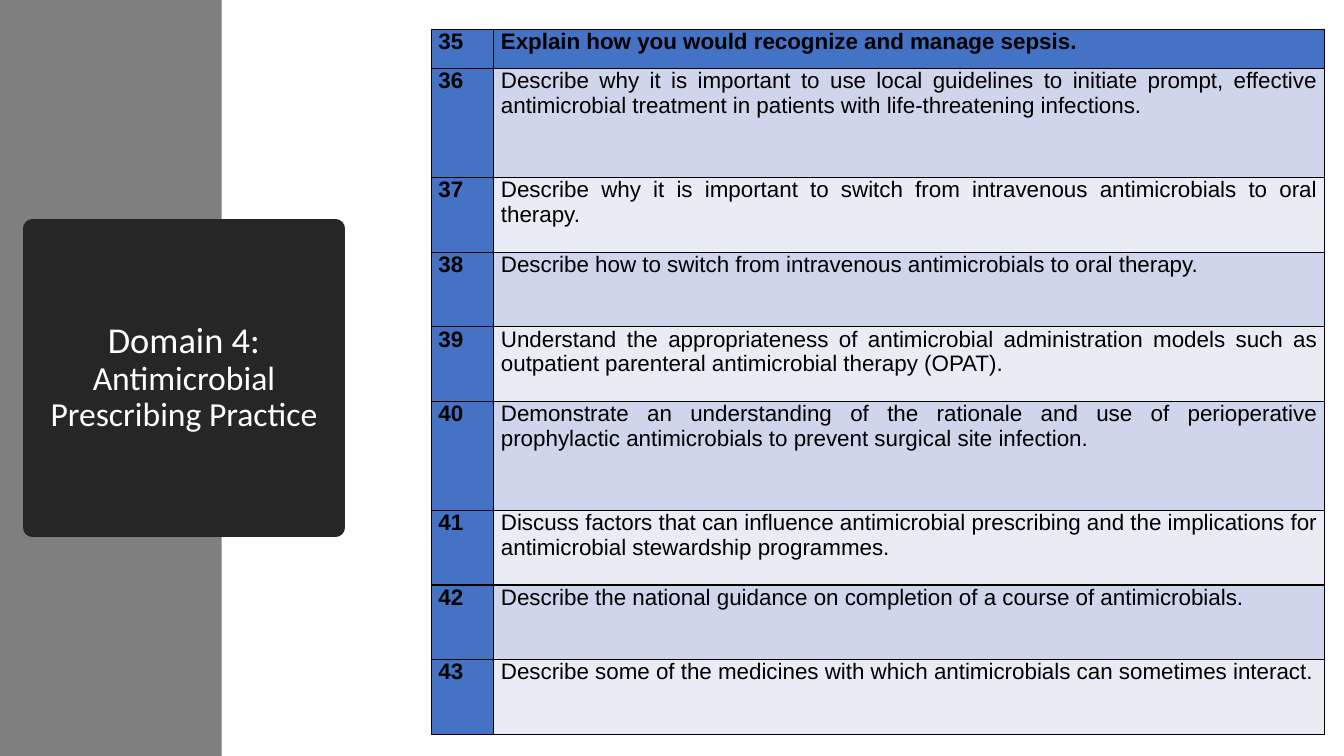
import pptx
import pptx.util
import pptx.oxml
import pptx.oxml.ns
import pptx.dml.color
import pptx.enum.dml
import pptx.enum.shapes
import pptx.enum.text

COLORS = {
    "sidebar": "7F7F7F",
    "title": "262626",
    "white": "FFFFFF",
    "black": "000000",
    "accent": "4472C4",
    "bands": ("E9EBF5", "CFD5EA"),
}
ROW_HEIGHTS = {1: 0.052, 2: 0.0987, 3: 0.144}
FIRST_NUMBER = 35
COMPETENCIES = [
    (1, "Explain how you would recognize and manage sepsis."),
    (3, "Describe why it is important to use local guidelines to initiate prompt, effective "
        "antimicrobial treatment in patients with life-threatening infections."),
    (2, "Describe why it is important to switch from intravenous antimicrobials to oral therapy."),
    (2, "Describe how to switch from intravenous antimicrobials to oral therapy."),
    (2, "Understand the appropriateness of antimicrobial administration models such as "
        "outpatient parenteral antimicrobial therapy (OPAT)."),
    (3, "Demonstrate an understanding of the rationale and use of perioperative "
        "prophylactic antimicrobials to prevent surgical site infection."),
    (2, "Discuss factors that can influence antimicrobial prescribing and the implications for "
        "antimicrobial stewardship programmes."),
    (2, "Describe the national guidance on completion of a course of antimicrobials."),
    (2, "Describe some of the medicines with which antimicrobials can sometimes interact."),
]


def color(value):
    return pptx.dml.color.RGBColor.from_string(value)


class SlideBuilder:
    title_font = "Calibri"
    table_font = "Arial"

    def __init__(self, presentation):
        self.width = presentation.slide_width
        self.height = presentation.slide_height
        self.slide = presentation.slides.add_slide(presentation.slide_layouts[5])

    def box(self, left, top, width, height):
        return (int(left * self.width), int(top * self.height),
                int(width * self.width), int(height * self.height))

    def paint(self, target, value):
        target.fill.solid()
        target.fill.fore_color.rgb = color(value)

    def style_run(self, run, font, size, value, bold=False):
        run.font.name = font
        run.font.size = pptx.util.Pt(size)
        run.font.bold = bold
        run.font.color.rgb = color(value)

    def sidebar(self, width):
        shape = self.slide.shapes.add_shape(
            pptx.enum.shapes.MSO_SHAPE.RECTANGLE, *self.box(0, 0, width, 1))
        shape.shadow.inherit = False
        self.paint(shape, COLORS["sidebar"])
        shape.line.fill.background()
        self.slide.shapes.title.element.addprevious(shape.element)

    def title(self, parts, left, top, width, height):
        shape = self.slide.shapes.title
        shape.left, shape.top, shape.width, shape.height = self.box(left, top, width, height)
        shape.element.spPr.append(pptx.oxml.parse_xml(
            f'<a:prstGeom {pptx.oxml.ns.nsdecls("a")} prst="ellipse"><a:avLst/></a:prstGeom>'))
        self.paint(shape, COLORS["title"])
        shape.line.color.rgb = color(COLORS["title"])
        shape.line.width = pptx.util.Pt(13.75)
        frame = shape.text_frame
        frame.word_wrap = True
        frame.auto_size = pptx.enum.text.MSO_AUTO_SIZE.NONE
        frame.vertical_anchor = pptx.enum.text.MSO_ANCHOR.MIDDLE
        paragraph = frame.paragraphs[0]
        paragraph.alignment = pptx.enum.text.PP_ALIGN.CENTER
        paragraph.line_spacing = 0.9
        for text, size in parts:
            run = paragraph.add_run()
            run.text = text
            self.style_run(run, self.title_font, size, COLORS["white"])

    def table(self, rows, left, top, column_shares):
        heights = [ROW_HEIGHTS[lines] for lines, text in rows]
        table = self.slide.shapes.add_table(
            len(rows), len(column_shares),
            *self.box(left, top, sum(column_shares), sum(heights))).table
        for column, share in zip(table.columns, column_shares):
            column.width = int(share * self.width)
        for index, (lines, text) in enumerate(rows):
            table.rows[index].height = int(heights[index] * self.height)
            header = index == 0
            band = COLORS["accent"] if header else COLORS["bands"][index % 2]
            self.cell(table.cell(index, 0), str(FIRST_NUMBER + index), COLORS["accent"], True)
            self.cell(table.cell(index, 1), text, band, header)

    def cell(self, cell, text, fill, bold):
        cell.margin_left = cell.margin_right = pptx.util.Inches(0.07)
        cell.margin_top = cell.margin_bottom = 0
        self.paint(cell, fill)
        cell.text_frame.text = text
        paragraph = cell.text_frame.paragraphs[0]
        paragraph.alignment = pptx.enum.text.PP_ALIGN.JUSTIFY
        self.style_run(paragraph.runs[0], self.table_font, 16, COLORS["black"], bold)
        properties = cell._tc.get_or_add_tcPr()
        for position, side in enumerate("LRTB"):
            properties.insert(position, pptx.oxml.parse_xml(
                f'<a:ln{side} {pptx.oxml.ns.nsdecls("a")} w="{pptx.util.Pt(1)}"><a:solidFill>'
                f'<a:srgbClr val="{COLORS["black"]}"/></a:solidFill></a:ln{side}>'))


def main():
    presentation = pptx.Presentation()
    presentation.slide_width = pptx.util.Inches(13.33)
    presentation.slide_height = pptx.util.Inches(7.5)
    builder = SlideBuilder(presentation)
    builder.sidebar(0.165)
    builder.title([("Domain 4: ", 26), ("Antimicrobial Prescribing Practice", 24)],
                  0.024, 0.3027, 0.2258, 0.3947)
    builder.table(COMPETENCIES, 0.321, 0.039, (0.0465, 0.618))
    presentation.save("out.pptx")


if __name__ == "__main__":
    main()
